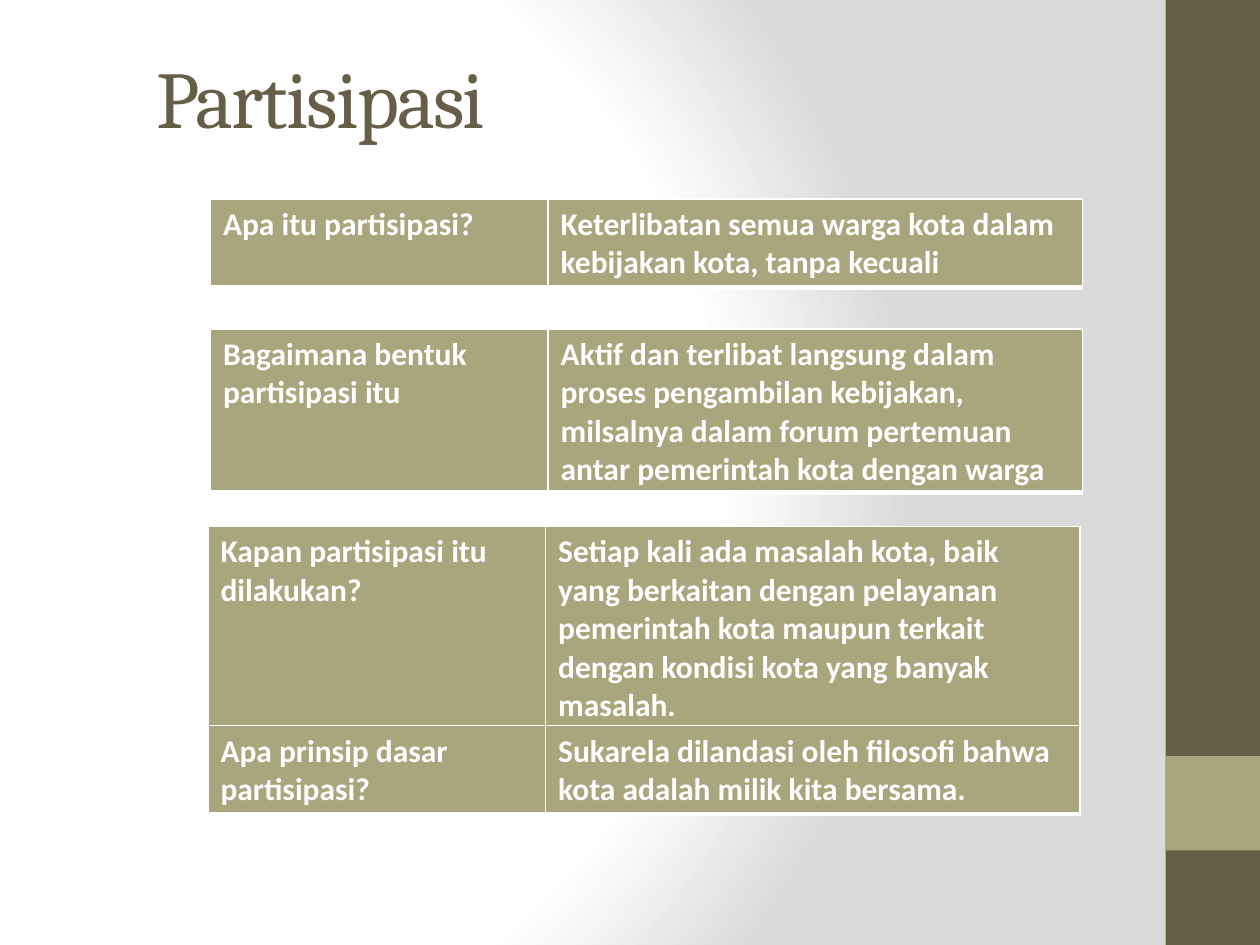
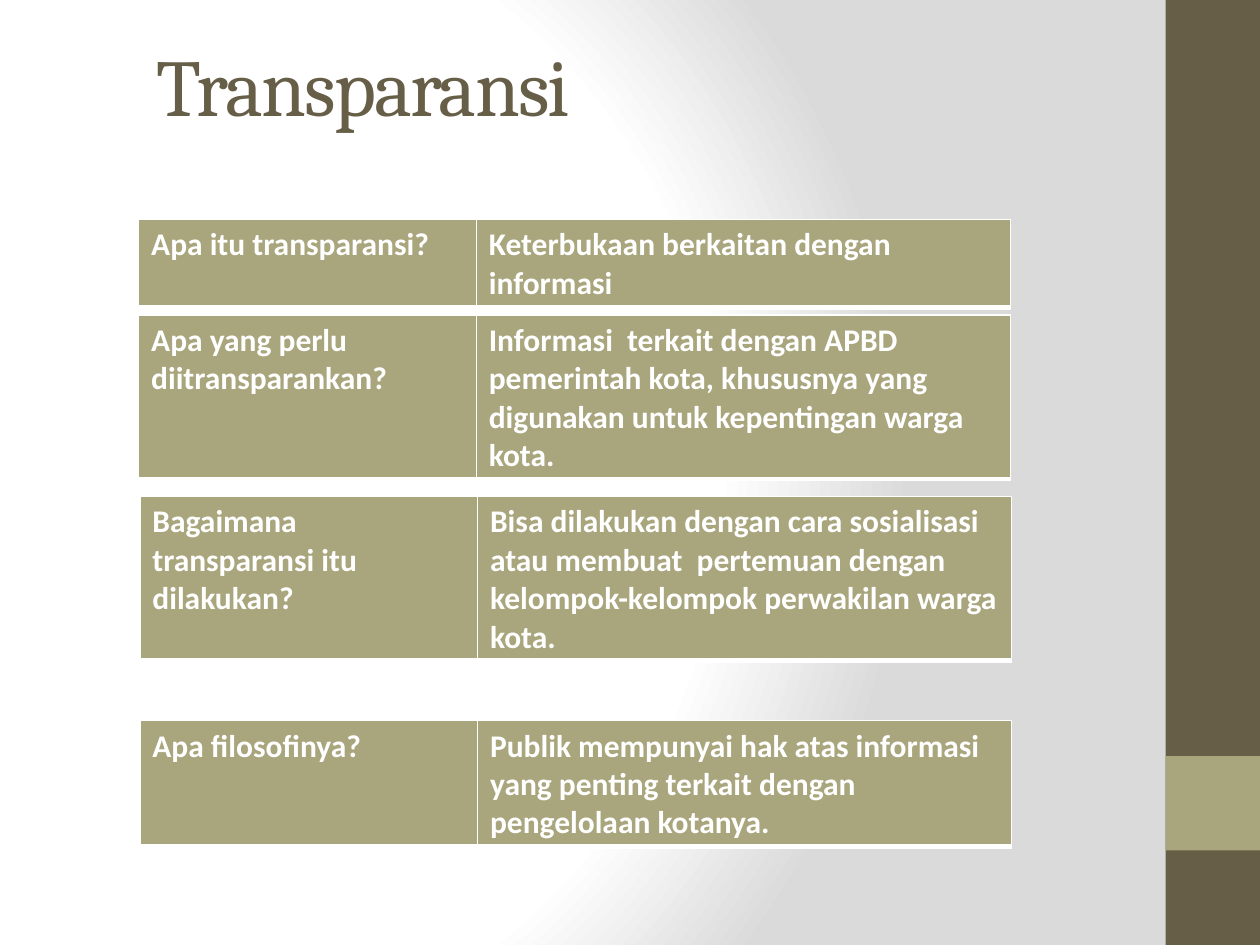
from dataclasses import dataclass

from pptx import Presentation
from pptx.dml.color import RGBColor
from pptx.enum.shapes import MSO_SHAPE as Shape
from pptx.enum.text import MSO_ANCHOR as Anchor
from pptx.oxml import parse_xml
from pptx.oxml.ns import nsdecls, qn
from pptx.util import Inches, Pt


@dataclass(frozen=True)
class Theme:
    dark: str = "675E47"
    olive: str = "A9A57C"
    white: str = "FFFFFF"
    grey: str = "DADADA"
    title_font: str = "Cambria"
    body_font: str = "Calibri"
    title_size: int = 46
    body_size: int = 18


COLUMNS = (2.68, 4.24)
BORDERS = (("lnL", 1), ("lnR", 1), ("lnT", 1), ("lnB", 3))

# Each slide: title, title top, then (left, top, height, question, answer)
SLIDES = [
    ("Partisipasi", 0.14, [
        (1.67, 1.58, 0.7, "Apa itu partisipasi?",
         "Keterlibatan semua warga kota dalam kebijakan kota, tanpa kecuali"),
        (1.67, 2.61, 1.3, "Bagaimana bentuk partisipasi itu",
         "Aktif dan terlibat langsung dalam proses pengambilan kebijakan, "
         "milsalnya dalam forum pertemuan antar pemerintah kota dengan warga"),
        (1.65, 4.18, 1.6, "Kapan partisipasi itu dilakukan?",
         "Setiap kali ada masalah kota, baik yang berkaitan dengan pelayanan "
         "pemerintah kota maupun terkait dengan kondisi kota yang banyak masalah."),
        (1.65, 5.76, 0.7, "Apa prinsip dasar partisipasi?",
         "Sukarela dilandasi oleh filosofi bahwa kota adalah milik kita bersama."),
    ]),
    ("Transparansi", 0.04, [
        (1.1, 1.74, 0.7, "Apa itu transparansi?",
         "Keterbukaan berkaitan dengan informasi"),
        (1.1, 2.5, 1.3, "Apa yang perlu diitransparankan?",
         "Informasi  terkait dengan APBD pemerintah kota, khususnya yang "
         "digunakan untuk kepentingan warga kota."),
        (1.11, 3.94, 1.3, "Bagaimana transparansi itu dilakukan?",
         "Bisa dilakukan dengan cara sosialisasi atau membuat  pertemuan "
         "dengan kelompok-kelompok perwakilan warga kota."),
        (1.11, 5.72, 1, "Apa filosofinya?",
         "Publik mempunyai hak atas informasi yang penting terkait dengan "
         "pengelolaan kotanya."),
    ]),
]


def write(tf, text, *, font, size, color, bold=False, spacing=None):
    tf.word_wrap = True
    r = tf.paragraphs[0].add_run()
    r.text = text
    r.font.name = font
    r.font.size = Pt(size)
    r.font.bold = bold
    r.font.color.rgb = RGBColor.from_string(color)
    if spacing is not None:
        r.font._element.set("spc", str(spacing * 100))


class Deck:
    def __init__(self, theme):
        self.theme = theme
        self.prs = Presentation()
        self.prs.slide_width, self.prs.slide_height = Inches(10), Inches(7.5)
        self.s = None

    def new_slide(self):
        self.s = self.prs.slides.add_slide(self.prs.slide_layouts[6])
        self.background()
        self.band(0, 7.5, self.theme.dark)
        self.band(6, 0.75, self.theme.olive)

    def background(self):
        """Fill the slide with a circular gradient from white to grey."""
        t = self.theme
        stops = "".join(
            f'<a:gs pos="{pos * 1000}"><a:srgbClr val="{color}"/></a:gs>'
            for pos, color in ((0, t.white), (75, t.white), (100, t.grey)))
        self.s.background.fill.solid()
        bg = self.s.element.find(".//" + qn("p:bgPr"))
        bg.replace(bg[0], parse_xml(
            f'<a:gradFill {nsdecls("a")} rotWithShape="1"><a:gsLst>{stops}</a:gsLst>'
            '<a:path path="circle"><a:fillToRect l="20000" t="50000" r="100000" '
            'b="50000"/></a:path></a:gradFill>'))

    def band(self, top, height, color):
        sp = self.s.shapes.add_shape(
            Shape.RECTANGLE, Inches(9.25), Inches(top), Inches(0.75), Inches(height))
        sp.shadow.inherit = False
        sp.fill.solid()
        sp.fill.fore_color.rgb = RGBColor.from_string(color)
        sp.line.fill.background()

    def title(self, text, top):
        t = self.theme
        tf = self.s.shapes.add_textbox(
            Inches(1.14), Inches(top), Inches(7.68), Inches(1.25)).text_frame
        tf.vertical_anchor = Anchor.MIDDLE
        write(tf, text, font=t.title_font, size=t.title_size, color=t.dark, spacing=-1)

    def question_table(self, left, top, height, *texts):
        t = self.theme
        table = self.s.shapes.add_table(
            1, len(COLUMNS), Inches(left), Inches(top),
            Inches(sum(COLUMNS)), Inches(height)).table
        table.first_row = table.horz_banding = False
        for column, width, cell, text in zip(
                table.columns, COLUMNS, table.rows[0].cells, texts):
            column.width = Inches(width)
            write(cell.text_frame, text, font=t.body_font, size=t.body_size,
                  color=t.white, bold=True)
            cell.fill.solid()
            cell.fill.fore_color.rgb = RGBColor.from_string(t.olive)
            self.borders(cell)

    def borders(self, cell):
        tc_pr = cell._tc.get_or_add_tcPr()
        for i, (side, width) in enumerate(BORDERS):
            tc_pr.insert(i, parse_xml(
                f'<a:{side} {nsdecls("a")} w="{Pt(width)}"><a:solidFill>'
                f'<a:srgbClr val="{self.theme.white}"/></a:solidFill></a:{side}>'))


def main():
    deck = Deck(Theme())
    for title, title_top, questions in SLIDES:
        deck.new_slide()
        deck.title(title, title_top)
        for question in questions:
            deck.question_table(*question)
    deck.prs.save("out.pptx")


if __name__ == "__main__":
    main()
